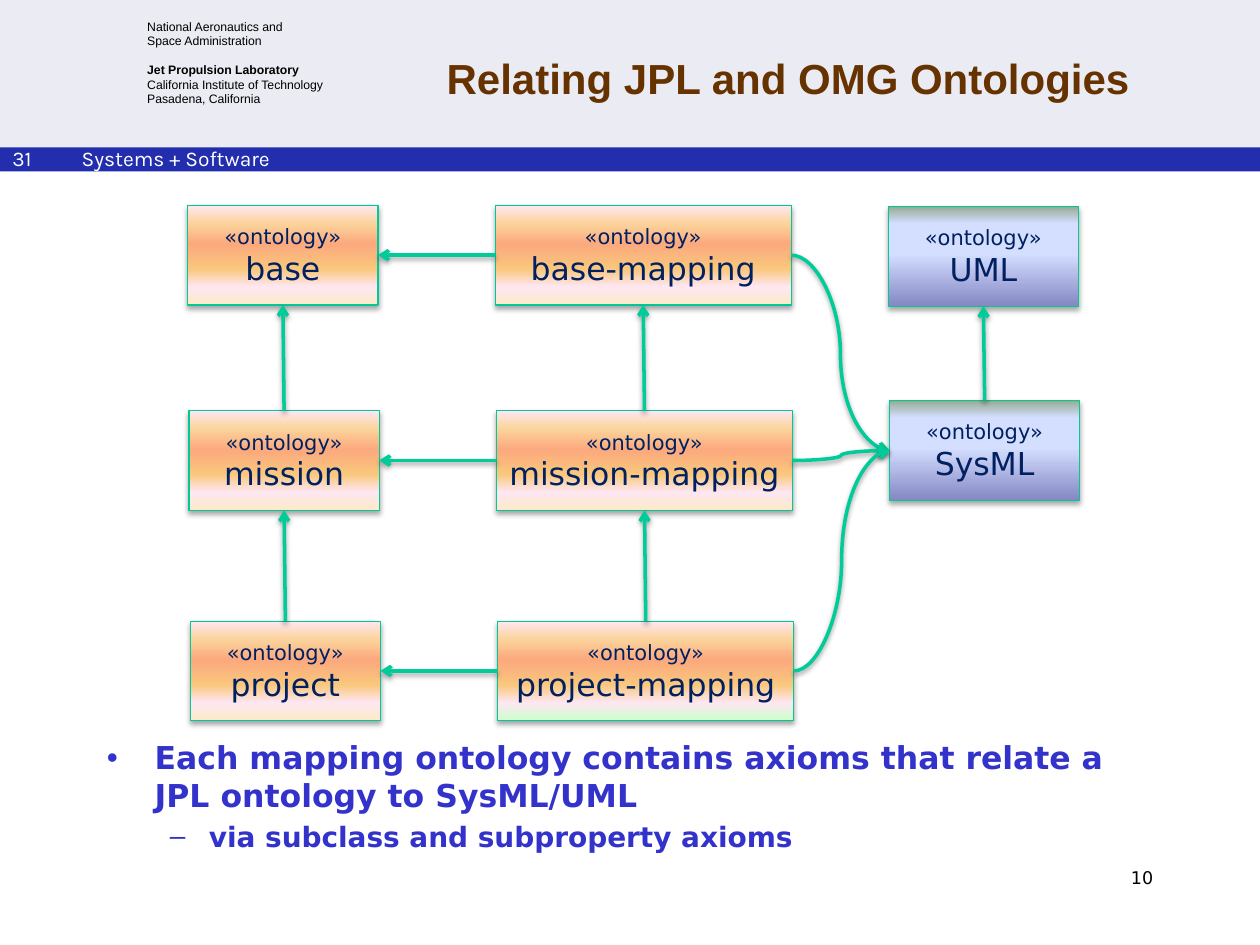
from lxml import etree
from pptx import Presentation
from pptx import util as u
from pptx.dml.color import RGBColor
from pptx.enum import shapes, text
from pptx.oxml import ns

# The slide is a fine grid of 1000 columns by 750 rows
COLS, ROWS = 1000, 750
CELL = u.Inches(10) // COLS

WARM = [(18, "FEE7F2"), (36, "FAC77D"), (61, "FBA97D"), (82, "FBD49C"), (100, "FEE7F2")]
CREAM = [(0, "FBEAC7")] + WARM
MINT = [(0, "CCFFCC")] + WARM
BLUE = [(0, "8488C4"), (53, "D4DEFF"), (83, "D4DEFF"), (100, "96AB94")]

TOP, LEFT, BOTTOM, RIGHT = range(4)  # connection sites of a rectangle


def rgb(hex_color):
    return RGBColor.from_string(hex_color)


def cells(*counts):
    return [n * CELL for n in counts]


def sub(parent, tag, **attrs):
    return etree.SubElement(parent, ns.qn(tag), {k: str(v) for k, v in attrs.items()})


def add_shadow(s, dist, opacity):
    effects = s._element.spPr.get_or_add_effectLst() if hasattr(
        s._element.spPr, "get_or_add_effectLst") else sub(s._element.spPr, "a:effectLst")
    shadow = sub(effects, "a:outerShdw", blurRad=u.Pt(3.1), dist=u.Pt(dist),
                 dir=90 * 60000, rotWithShape=0)
    sub(sub(shadow, "a:srgbClr", val="000000"), "a:alpha", val=opacity * 1000)


def style(p, size, color, font="DejaVu Sans", bold=False, align=None):
    p.font.size, p.font.name, p.font.bold = u.Pt(size), font, bold
    p.font.color.rgb = rgb(color)
    p.alignment = align


def add_band(slide, row, rows, color):
    s = slide.shapes.add_shape(shapes.MSO_SHAPE.RECTANGLE, *cells(0, row, COLS, rows))
    s.shadow.inherit = False
    s.fill.solid()
    s.fill.fore_color.rgb = rgb(color)
    s.line.fill.background()


def add_text(slide, place, lines, wrap=True, anchor=text.MSO_ANCHOR.TOP, **look):
    tf = slide.shapes.add_textbox(*cells(*place)).text_frame
    tf.word_wrap, tf.vertical_anchor = wrap, anchor
    for i, line in enumerate(lines):
        p = tf.paragraphs[0] if i == 0 else tf.add_paragraph()
        p.text = line
        style(p, **look)
    return tf


def add_bullet(p, mark, margin, hanging, size):
    pPr = p._p.get_or_add_pPr()
    pPr.set("marL", str(u.Inches(margin)))
    pPr.set("indent", str(-u.Inches(hanging)))
    sub(pPr, "a:buFont", typeface="Arial")
    sub(pPr, "a:buChar", char=mark)
    style(p, size, "3333CC", bold=True)


def add_ontology(slide, name, col, row, cols, stops):
    s = slide.shapes.add_shape(shapes.MSO_SHAPE.RECTANGLE, *cells(col, row, cols, 79))
    s.fill.gradient()
    s.fill.gradient_angle = 90
    stop_list = s._element.spPr.find(".//" + ns.qn("a:gsLst"))
    for old in list(stop_list):
        stop_list.remove(old)
    for pos, color in stops:
        sub(sub(stop_list, "a:gs", pos=pos * 1000), "a:srgbClr", val=color)
    s.line.color.rgb, s.line.width = rgb("00C896"), u.Pt(0.75)
    add_shadow(s, 1.8, 35)

    tf = s.text_frame
    tf.word_wrap, tf.vertical_anchor = True, text.MSO_ANCHOR.MIDDLE
    tf.margin_left = tf.margin_right = u.Inches(0.05)
    p = tf.paragraphs[0]
    p.text = "«ontology»\v" + name
    style(p, 12, "002060", align=text.PP_ALIGN.CENTER)
    p.runs[-1].font.size = u.Pt(18)
    return s


def add_arrow(slide, start, start_site, end, end_site, kind=shapes.MSO_CONNECTOR.STRAIGHT):
    c = slide.shapes.add_connector(kind, 0, 0, 0, 0)
    c.begin_connect(start, start_site)
    c.end_connect(end, end_site)
    c.line.color.rgb, c.line.width = rgb("00CC99"), u.Pt(2)
    sub(c.line._get_or_add_ln(), "a:tailEnd", type="arrow")
    add_shadow(c, 1.6, 38)


def add_header(slide):
    add_band(slide, 0, 136, "EBEBF3")
    tf = add_text(slide, (107, 10, 162, 80),
                  ["National Aeronautics and \vSpace Administration",
                   "Jet Propulsion Laboratory",
                   "California Institute of Technology",
                   "Pasadena, California"],
                  wrap=False, size=7, color="000000", font="Arial")
    laboratory = tf.paragraphs[1]
    laboratory.space_before, laboratory.font.bold = u.Pt(8), True

    add_band(slide, 117, 19, "232EAE")
    bar = dict(size=12, color="FFFFFF", font="Karla")
    add_text(slide, (0, 111, 41, 30), ["31"], wrap=False, **bar)
    add_text(slide, (55, 111, 291, 30), ["Systems + Software"], **bar)
    add_text(slide, (264, 17, 723, 89), ["Relating JPL and OMG Ontologies"],
             anchor=text.MSO_ANCHOR.MIDDLE, size=24, color="663300", font="Arial",
             bold=True, align=text.PP_ALIGN.CENTER)


def add_diagram(slide):
    # Each row sits one grid column further right than the row above
    names, tops = ["base", "mission", "project"], [163, 326, 493]
    plain, mapping = [], []
    for i, (name, top) in enumerate(zip(names, tops)):
        plain.append(add_ontology(slide, name, 149 + i, top, 151, CREAM))
        mapping.append(add_ontology(slide, name + "-mapping", 393 + i, top, 235,
                                    MINT if name == "project" else CREAM))
    standards = [add_ontology(slide, name, 705 + i, top, 151, BLUE)
                 for i, (name, top) in enumerate([("UML", 164), ("SysML", 318)])]

    # Upward arrows within each column
    for column in (plain, mapping, standards):
        for upper, lower in zip(column, column[1:]):
            add_arrow(slide, lower, TOP, upper, BOTTOM)

    # Each mapping points to its own ontology and to SysML
    for own, mapped in zip(plain, mapping):
        add_arrow(slide, mapped, LEFT, own, RIGHT)
        add_arrow(slide, mapped, RIGHT, standards[-1], LEFT, shapes.MSO_CONNECTOR.CURVE)


def add_notes_below(slide):
    tf = add_text(slide, (75, 581, 850, 109),
                  ["Each mapping ontology contains axioms that relate a JPL ontology to SysML/UML",
                   "via subclass and subproperty axioms"], size=18, color="3333CC")
    main_point, detail = tf.paragraphs
    for p in tf.paragraphs:
        p._p.remove(p._p.pPr)
    add_bullet(main_point, "•", 0.38, 0.38, 18)
    add_bullet(detail, "–", 0.81, 0.31, 16)
    detail.level, detail.space_before = 1, u.Pt(3.2)
    add_text(slide, (717, 683, 208, 50), ["10"], size=10, color="000000",
             align=text.PP_ALIGN.RIGHT)


def main():
    prs = Presentation()
    prs.slide_width, prs.slide_height = cells(COLS, ROWS)
    slide = prs.slides.add_slide(prs.slide_layouts[6])
    add_header(slide)
    add_diagram(slide)
    add_notes_below(slide)
    prs.save("out.pptx")


if __name__ == "__main__":
    main()
